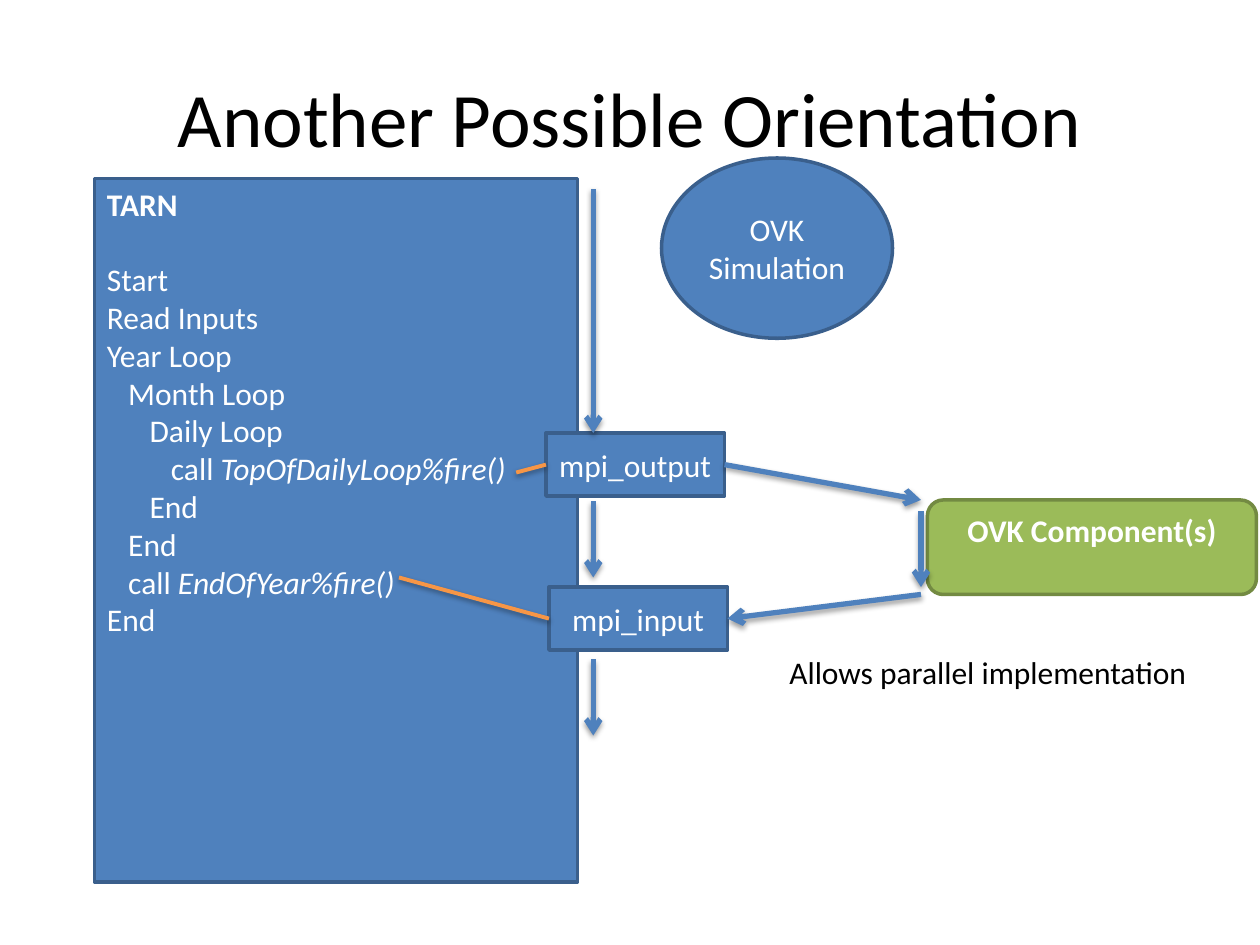
from dataclasses import dataclass
from typing import Optional

from lxml.etree import SubElement
from pptx import Presentation
from pptx.dml.color import RGBColor
from pptx.enum.shapes import MSO_CONNECTOR, MSO_SHAPE
from pptx.enum.text import MSO_ANCHOR as Anchor, PP_ALIGN as Align
from pptx.oxml.ns import qn
from pptx.util import Pt

BLUE = RGBColor(0x4F, 0x81, 0xBD)
DARK_BLUE = RGBColor(0x3A, 0x5F, 0x8C)
GREEN = RGBColor(0x9B, 0xBB, 0x59)
DARK_GREEN = RGBColor(0x73, 0x8A, 0x42)
ORANGE = RGBColor(0xF7, 0x96, 0x46)
WHITE = RGBColor(0xFF, 0xFF, 0xFF)
BLACK = RGBColor(0, 0, 0)

FONT = "Calibri"
INDENT = 12.2
HEADING_GAP = 21.6
FLOW_X = 339
COMPONENT_X = 526.3


@dataclass
class Step:
    text: str
    level: int = 0
    routine: str = ""
    bold: bool = False
    space_after: float = 0


@dataclass
class Box:
    left: float
    top: float
    width: float
    height: float
    kind: MSO_SHAPE = MSO_SHAPE.RECTANGLE
    fill: RGBColor = BLUE
    outline: RGBColor = DARK_BLUE


@dataclass
class Link:
    start: tuple
    end: tuple
    color: RGBColor = BLUE
    width: float = 3
    arrow: bool = True
    source: Optional[object] = None
    target: Optional[object] = None
    target_side: int = 1


PROGRAM = [
    Step("TARN", bold=True, space_after=HEADING_GAP),
    Step("Start"),
    Step("Read Inputs"),
    Step("Year Loop"),
    Step("Month Loop", 1),
    Step("Daily Loop", 2),
    Step("call ", 3, "TopOfDailyLoop%fire()"),
    Step("End", 2),
    Step("End", 1),
    Step("call ", 1, "EndOfYear%fire()"),
    Step("End"),
]


def write_text(paragraph, text: str, *, size: float = 18, color: RGBColor = WHITE,
               bold: bool = False, italic: bool = False, align=Align.CENTER) -> None:
    paragraph.alignment = align
    run = paragraph.add_run()
    run.text = text
    font = run.font
    font.name, font.size, font.bold, font.italic = FONT, Pt(size), bold, italic
    font.color.rgb = color


def add_box(slide, box: Box, anchor=Anchor.MIDDLE):
    shape = slide.shapes.add_shape(
        box.kind, Pt(box.left), Pt(box.top), Pt(box.width), Pt(box.height))
    shape.shadow.inherit = False
    shape.fill.solid()
    shape.fill.fore_color.rgb = box.fill
    shape.line.color.rgb = box.outline
    shape.line.width = Pt(2)
    shape.text_frame.word_wrap = True
    shape.text_frame.vertical_anchor = anchor
    return shape


def add_label_box(slide, box: Box, text: str, anchor=Anchor.MIDDLE, bold: bool = False):
    shape = add_box(slide, box, anchor)
    write_text(shape.text_frame.paragraphs[0], text, bold=bold)
    return shape


def add_caption(slide, text: str, left: float, top: float, width: float, height: float,
                *, wrap: bool, anchor=Anchor.TOP, **text_format) -> None:
    caption = slide.shapes.add_textbox(Pt(left), Pt(top), Pt(width), Pt(height))
    caption.text_frame.word_wrap = wrap
    caption.text_frame.vertical_anchor = anchor
    write_text(caption.text_frame.paragraphs[0], text, color=BLACK, **text_format)


def add_program(slide, box: Box, steps: list[Step]) -> None:
    frame = add_box(slide, box, Anchor.TOP).text_frame
    for index, step in enumerate(steps):
        paragraph = frame.add_paragraph() if index else frame.paragraphs[0]
        paragraph.space_after = Pt(step.space_after)
        paragraph._p.get_or_add_pPr().set("marL", str(Pt(INDENT * step.level)))
        write_text(paragraph, step.text, bold=step.bold, align=Align.LEFT)
        if step.routine:
            write_text(paragraph, step.routine, italic=True, align=Align.LEFT)


def add_soft_shadow(connector) -> None:
    effects = SubElement(connector._element.spPr, qn("a:effectLst"))
    shadow = SubElement(effects, qn("a:outerShdw"), blurRad=str(Pt(3.1)),
                        dist=str(Pt(1.6)), dir="5400000", rotWithShape="0")
    color = SubElement(shadow, qn("a:srgbClr"), val="000000")
    SubElement(color, qn("a:alpha"), val="38000")


def add_link(slide, link: Link) -> None:
    connector = slide.shapes.add_connector(
        MSO_CONNECTOR.STRAIGHT, *(Pt(value) for value in link.start + link.end))
    if link.source is not None:
        connector.begin_connect(link.source, 3)
    if link.target is not None:
        connector.end_connect(link.target, link.target_side)
    connector.line.color.rgb = link.color
    connector.line.width = Pt(link.width)
    if link.arrow:
        SubElement(connector.line._get_or_add_ln(), qn("a:tailEnd"), type="arrow")
    add_soft_shadow(connector)


def main() -> None:
    presentation = Presentation()
    presentation.slide_width, presentation.slide_height = Pt(720), Pt(540)
    slide = presentation.slides.add_slide(presentation.slide_layouts[6])

    add_caption(slide, "Another Possible Orientation", 36, 21.6, 648, 90,
                wrap=True, anchor=Anchor.MIDDLE, size=44)
    add_program(slide, Box(54, 102, 276, 402), PROGRAM)
    mpi_output = add_label_box(slide, Box(312, 247.5, 102, 36), "mpi_output")
    mpi_input = add_label_box(slide, Box(313.7, 335.5, 102, 36), "mpi_input")
    add_label_box(slide, Box(378, 90.3, 132, 103, MSO_SHAPE.OVAL), "OVK Simulation")
    add_label_box(
        slide, Box(530, 285.7, 188, 54, MSO_SHAPE.ROUNDED_RECTANGLE, GREEN, DARK_GREEN),
        "OVK Component(s)", Anchor.TOP, bold=True)
    add_caption(slide, "Allows parallel implementation", 444, 369.4, 244, 29,
                wrap=False, align=Align.LEFT)

    call_line = dict(color=ORANGE, width=2.25, arrow=False)
    links = [
        Link((295, 270), (312, 265.5), target=mpi_output, **call_line),
        Link((228, 330), (313.7, 353.5), target=mpi_input, **call_line),
        Link((414, 265.5), (COMPONENT_X, 285.7), source=mpi_output),
        Link((COMPONENT_X, 339.7), (415.7, 353.5), target=mpi_input, target_side=3),
        Link((COMPONENT_X, 292.3), (COMPONENT_X, 335.5)),
    ]
    links += [Link((FLOW_X, top), (FLOW_X, bottom))
              for top, bottom in ((108, 247.5), (286.5, 330), (376.8, 420.3))]
    for link in links:
        add_link(slide, link)

    presentation.save("out.pptx")


if __name__ == "__main__":
    main()
